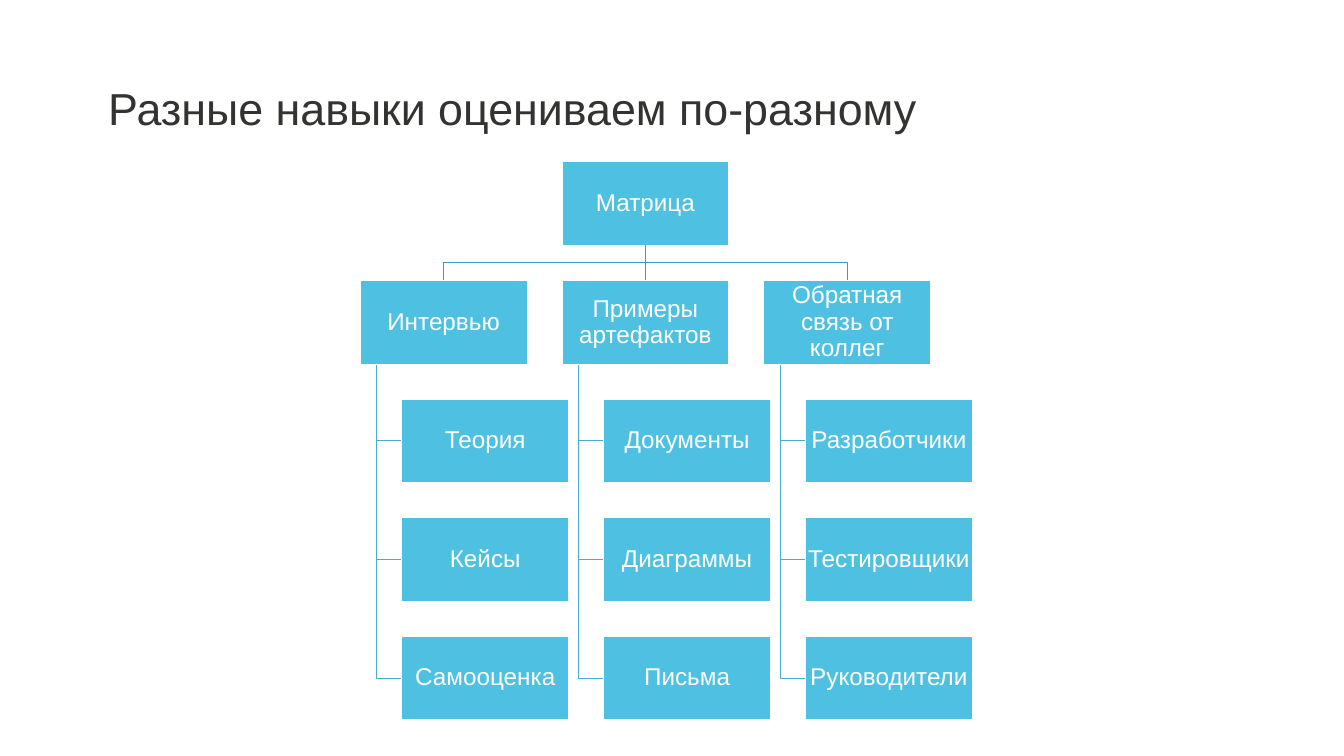
from lxml.etree import SubElement
from pptx import Presentation
from pptx.dml.color import RGBColor
from pptx.enum.shapes import MSO_CONNECTOR as Connector, MSO_SHAPE as Shape
from pptx.enum.text import MSO_ANCHOR as Anchor, PP_ALIGN as Align
from pptx.oxml.ns import qn
from pptx.util import Inches, Pt

COLORS = {"node": "4EC1E2", "white": "FFFFFF", "title": "333332",
          "trunk": "3E9BB5", "branch": "47AFCD"}
FONT = "Arial"
ROOT = "Матрица"
BRANCHES = {
    "Интервью": ["Теория", "Кейсы", "Самооценка"],
    "Примеры артефактов": ["Документы", "Диаграммы", "Письма"],
    "Обратная связь от коллег": ["Разработчики", "Тестировщики", "Руководители"],
}

# Tree proportions, in node widths across and node heights down
COLUMN_STEP, ROW_STEP = 1.21, 1.42
LEAF_INDENT, STEM_INDENT = 0.25, 0.1


def rgb(name):
    return RGBColor.from_string(COLORS[name])


def write(shape, text, size, color, spacing, align, anchor, inset):
    frame = shape.text_frame
    frame.word_wrap = True
    frame.vertical_anchor = anchor
    frame.margin_left = frame.margin_right = Inches(inset)
    frame.margin_top = frame.margin_bottom = Inches(inset)
    para = frame.paragraphs[0]
    para.text = text
    para.alignment = align
    para.line_spacing = spacing
    para.font.name = FONT
    para.font.size = Pt(size)
    para.font.color.rgb = rgb(color)


def set_line(shape, color):
    shape.line.color.rgb = rgb(color)
    shape.line.width = Pt(1)


def add_title(page, left, top, width, height):
    box = page.shapes.add_textbox(*map(Inches, (left, top, width, height)))
    write(box, "Разные навыки оцениваем по-разному", 48, "title", 0.96,
          Align.LEFT, Anchor.TOP, 0)


def add_bent_line(page, points, color):
    start, *rest = [(Inches(x), Inches(y)) for x, y in points]
    builder = page.shapes.build_freeform(*start)
    builder.add_line_segments(rest, close=False)
    bent = builder.convert_to_shape()
    bent.shadow.inherit = False
    bent.fill.background()
    set_line(bent, color)


def add_tree(page, left, top, width, height):
    columns = len(BRANCHES)
    rows = 2 + max(len(leaves) for leaves in BRANCHES.values())
    node_w = width / ((columns - 1) * COLUMN_STEP + 1 + LEAF_INDENT)
    node_h = height / ((rows - 1) * ROW_STEP + 1)

    def at(column, row, across=0, down=0):
        """Point inside a grid cell, as shares of the node's size."""
        return (left + (column * COLUMN_STEP + across) * node_w,
                top + (row * ROW_STEP + down) * node_h)

    def add_node(text, column, row, indent=0):
        x, y = at(column, row, indent)
        node = page.shapes.add_shape(Shape.RECTANGLE,
                                     *map(Inches, (x, y, node_w, node_h)))
        node.shadow.inherit = False
        node.fill.solid()
        node.fill.fore_color.rgb = rgb("node")
        set_line(node, "white")
        write(node, text, 26, "white", 0.9, Align.CENTER, Anchor.MIDDLE, 0.02)
        return node

    middle = (columns - 1) / 2
    bend = 1 + (ROW_STEP - 1) / 2

    # Lines behind the nodes
    for column, leaves in enumerate(BRANCHES.values()):
        if column != middle:
            add_bent_line(page, [at(middle, 0, 0.5, 1), at(middle, 0, 0.5, bend),
                                 at(column, 0, 0.5, bend), at(column, 1, 0.5)],
                          "trunk")
        for row in range(2, 2 + len(leaves)):
            add_bent_line(page, [at(column, 1, STEM_INDENT, 1),
                                 at(column, row, STEM_INDENT, 0.5),
                                 at(column, row, LEAF_INDENT, 0.5)], "branch")

    # Nodes, with a straight line to the branch under the root
    root = add_node(ROOT, middle, 0)
    for column, (name, leaves) in enumerate(BRANCHES.items()):
        branch = add_node(name, column, 1)
        if column == middle:
            link = page.shapes.add_connector(Connector.STRAIGHT, 0, 0, 0, 0)
            link.begin_connect(root, 2)
            link.end_connect(branch, 0)
            set_line(link, "trunk")
            SubElement(link.element.spPr, qn("a:effectLst"))
        for row, leaf in enumerate(leaves, start=2):
            add_node(leaf, column, row, LEAF_INDENT)


def main():
    deck = Presentation()
    deck.slide_width, deck.slide_height = Inches(20), Inches(11.25)
    page = deck.slides.add_slide(deck.slide_layouts[6])
    add_title(page, 1.61, 1.25, 12.96, 0.93)
    add_tree(page, 5.36, 2.41, 9.11, 8.3)
    deck.save("out.pptx")


if __name__ == "__main__":
    main()
